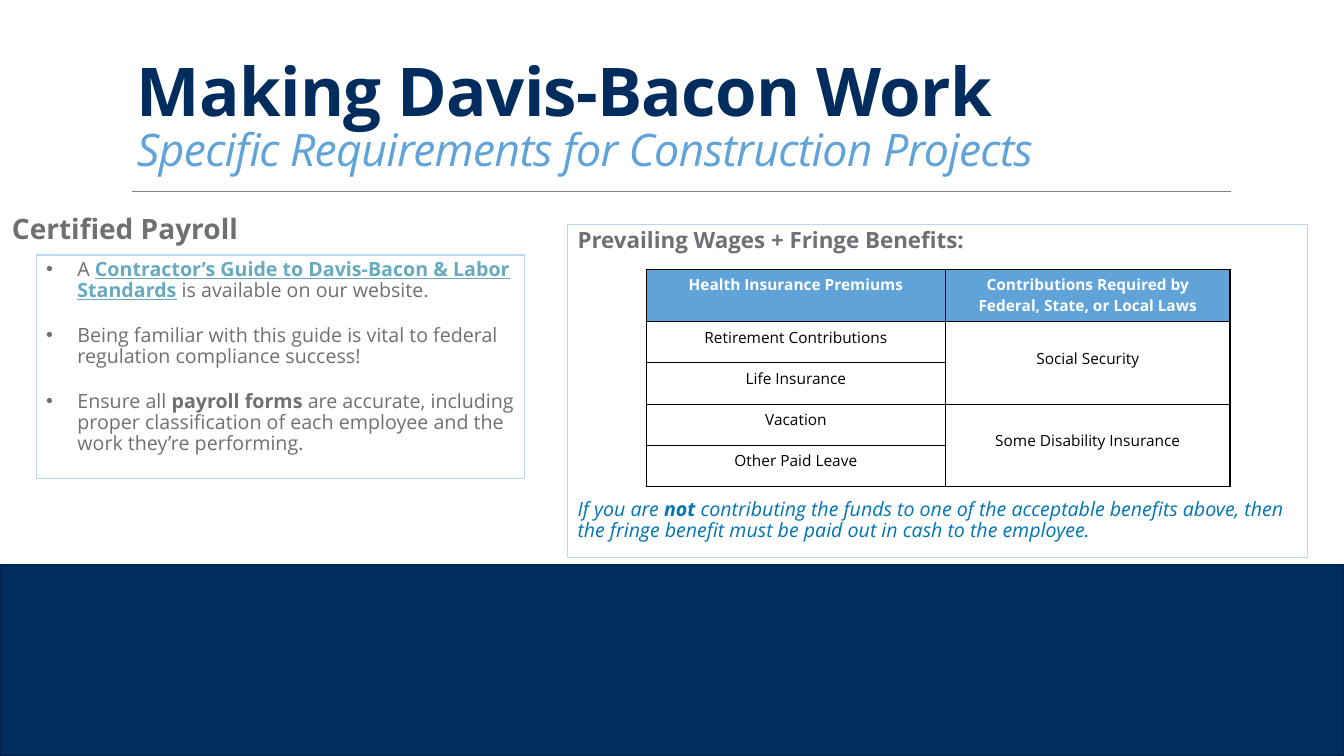
import lxml.etree
import pptx
import pptx.dml.color
import pptx.enum.shapes
import pptx.enum.text
import pptx.oxml
import pptx.oxml.ns
import pptx.util

PX = 9144
FONT = "Open Sans"
NAVY, SKY, GREY, PALE = "002D5D", "60A3D9", "6F6F74", "BFD7ED"
TEAL, BLUE, WHITE, BLACK = "67AABF", "0074B7", "FFFFFF", "000000"


def px(*nums):
    return [pptx.util.Emu(num * PX) for num in nums]


def tint(code):
    return pptx.dml.color.RGBColor.from_string(code)


def sub(node, tag, **keys):
    part = lxml.etree.SubElement(node, pptx.oxml.ns.qn(tag))
    for key, val in keys.items():
        part.set(key, str(val))
    return part


class Deck:
    """Holds the style and the current slide and draws its elements."""

    def __init__(self, wide, high):
        self.file = pptx.Presentation()
        self.file.slide_width, self.file.slide_height = px(wide, high)
        self.slide = self.file.slides.add_slide(self.file.slide_layouts[6])
        self.shapes = self.slide.shapes

    def rule(self, x1, y1, x2, y2, color, width):
        kind = pptx.enum.shapes.MSO_CONNECTOR.STRAIGHT
        line = self.shapes.add_connector(kind, *px(x1, y1, x2, y2))
        line.line.color.rgb = tint(color)
        line.line.width = pptx.util.Pt(width)
        sub(line._element.spPr, "a:effectLst")

    def rect(self, box, line, width, fill=None):
        kind = pptx.enum.shapes.MSO_SHAPE.RECTANGLE
        shape = self.shapes.add_shape(kind, *px(*box))
        shape.shadow.inherit = False
        if fill:
            shape.fill.solid()
            shape.fill.fore_color.rgb = tint(fill)
        else:
            shape.fill.background()
        shape.line.color.rgb = tint(line)
        shape.line.width = pptx.util.Pt(width)
        return self.frame(shape)

    def label(self, box):
        return self.frame(self.shapes.add_textbox(*px(*box)))

    def frame(self, shape):
        frame = shape.text_frame
        frame.word_wrap = True
        frame.vertical_anchor = pptx.enum.text.MSO_ANCHOR.TOP
        return frame

    def para(self, frame, first=False, gap=0, space=0.89, bullet=False):
        para = frame.paragraphs[0] if first else frame.add_paragraph()
        para.alignment = pptx.enum.text.PP_ALIGN.LEFT
        para.line_spacing = space
        para.space_before = pptx.util.Pt(gap)
        if bullet:
            props = para._p.get_or_add_pPr()
            props.set("marL", str(31 * PX))
            props.set("indent", str(-31 * PX))
            sub(props, "a:buFont", typeface="Arial")
            sub(props, "a:buChar", char="•")
        return para

    def run(self, para, text, size, color, bold=False, slant=False, under=False):
        run = para.add_run()
        run.text = text
        self.style(run, size, color, bold, slant, under)
        return run

    def style(self, run, size, color, bold=False, slant=False, under=False):
        font = run.font
        font.name, font.size = FONT, pptx.util.Pt(size)
        font.color.rgb = tint(color)
        font.bold, font.italic, font.underline = bold, slant, under

    def cell(self, cell, text, color, fill=None, top=5):
        cell.text_frame.text = text
        cell.margin_top = px(top)[0]
        para = cell.text_frame.paragraphs[0]
        para.alignment = pptx.enum.text.PP_ALIGN.CENTER
        for run in para.runs:
            self.style(run, 11, color, bold=bool(fill))
        if fill:
            cell.fill.solid()
            cell.fill.fore_color.rgb = tint(fill)
        else:
            cell.fill.background()

    def border(self, cell):
        props = cell._tc.get_or_add_tcPr()
        for spot, side in enumerate("LRTB"):
            edge = sub(props, "a:ln" + side, w=12700)
            sub(sub(edge, "a:solidFill"), "a:srgbClr", val=BLACK)
            props.insert(spot, edge)

    def table(self, box, cols, rows, heads, left, right):
        grid = self.shapes.add_table(len(rows), len(cols), *px(*box)).table
        grid.horz_banding = False
        for col, wide in zip(grid.columns, px(*cols)):
            col.width = wide
        for row, high in zip(grid.rows, px(*rows)):
            row.height = high
        for col, text in enumerate(heads):
            self.cell(grid.cell(0, col), text, WHITE, SKY)
        for row, text in enumerate(left, 1):
            self.cell(grid.cell(row, 0), text, BLACK)
            self.cell(grid.cell(row, 1), "", BLACK)
        for pair, text in enumerate(right):
            top = 1 + 2 * pair
            grid.cell(top, 1).merge(grid.cell(top + 1, 1))
            self.cell(grid.cell(top, 1), text, BLACK, top=26)
        for cell in grid.iter_cells():
            self.border(cell)


def main():
    deck = Deck(1333, 750)
    deck.rule(131, 190, 1221, 190, "808080", 0.5)
    deck.rect((0, 560, 1333, 190), "002145", 1.25, NAVY)

    guide = deck.rect((36, 253, 484, 222), PALE, 0.75)
    points = [
        [("A ", GREY, False, False),
         ("Contractor’s Guide to Davis-Bacon & Labor Standards", TEAL, True, True),
         (" is available on our website.", GREY, False, False)],
        [("Being familiar with this guide is vital to federal regulation "
          "compliance success!", GREY, False, False)],
        [("Ensure all ", GREY, False, False),
         ("payroll forms ", GREY, True, False),
         ("are accurate, including proper classification of each employee "
          "and the work they’re performing.", GREY, False, False)],
    ]
    for num, parts in enumerate(points):
        para = deck.para(guide, num == 0, gap=17 if num else 0, bullet=True)
        for text, color, bold, under in parts:
            deck.run(para, text, 14, color, bold, under=under)

    head = deck.para(deck.label((2, 209, 1117, 44)), True)
    deck.run(head, "Certified Payroll", 20, GREY, True)

    wages = deck.rect((563, 223, 734, 330), PALE, 0.75)
    head = deck.para(wages, True)
    deck.run(head, "Prevailing Wages + Fringe Benefits:", 16, GREY, True)
    note = deck.para(wages, gap=176)
    deck.run(note, "If you are ", 14, BLUE, slant=True)
    deck.run(note, "not", 14, BLUE, True, True)
    deck.run(note, " contributing the funds to one of the acceptable benefits above, "
             "then the fringe benefit must be paid out in cash to the employee.",
             14, BLUE, slant=True)

    title = deck.label((126, 41, 1186, 138))
    title.vertical_anchor = pptx.enum.text.MSO_ANCHOR.BOTTOM
    para = deck.para(title, True, space=0.85)
    main_run = deck.run(para, "Making Davis-Bacon Work", 48, NAVY, True)
    para.add_line_break()
    tag_run = deck.run(para, "Specific Requirements for Construction Projects",
                       32, SKY, slant=True)
    for run in (main_run, tag_run):
        run._r.get_or_add_rPr().set("spc", "-50")

    deck.table(
        (641, 267, 579, 216), (297, 282), (52, 41, 41, 41, 41),
        ("Health Insurance Premiums",
         "Contributions Required by Federal, State, or Local Laws"),
        ("Retirement Contributions", "Life Insurance", "Vacation",
         "Other Paid Leave"),
        ("Social Security", "Some Disability Insurance"))
    deck.file.save("out.pptx")


if __name__ == "__main__":
    main()
